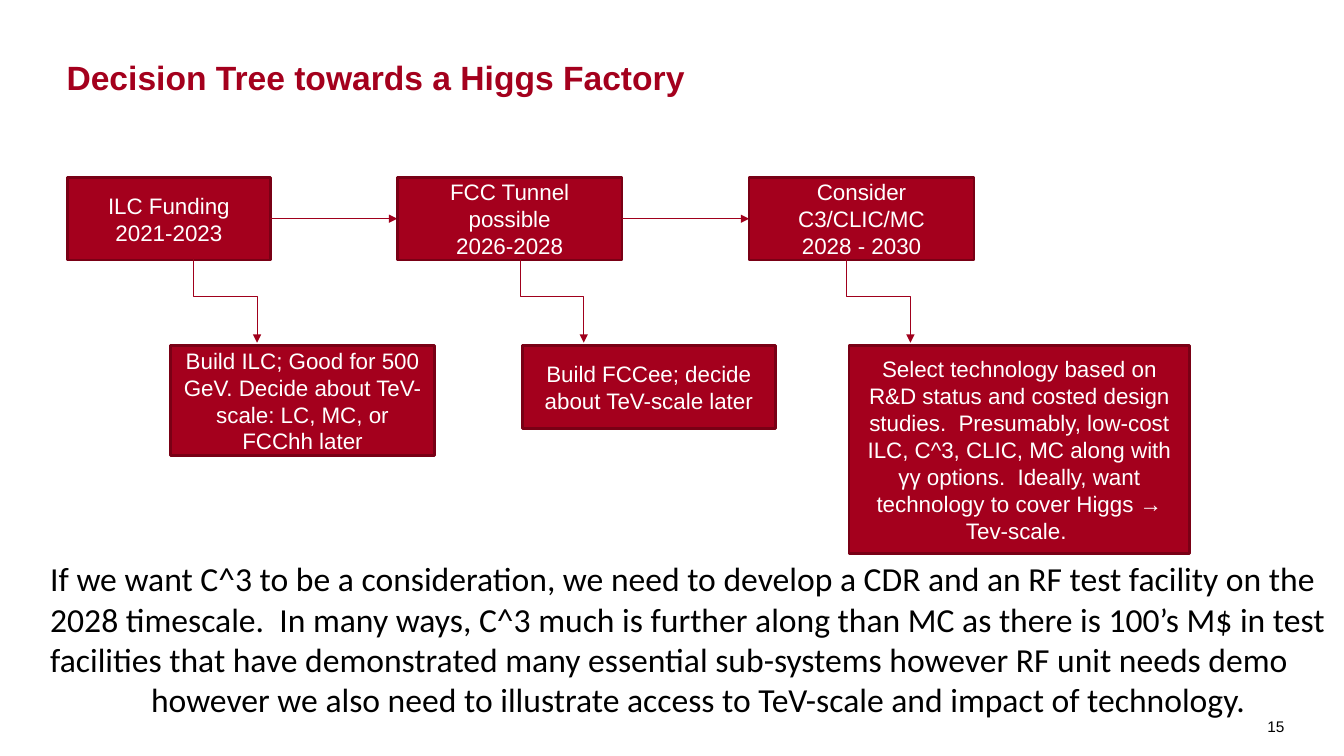
from lxml import etree
from pptx import Presentation
from pptx.dml.color import RGBColor
from pptx.enum.shapes import MSO_CONNECTOR as Connector, MSO_SHAPE as Shape
from pptx.enum.text import MSO_ANCHOR as Anchor, MSO_AUTO_SIZE as AutoSize, PP_ALIGN as Align
from pptx.oxml.ns import qn
from pptx.util import Inches, Pt

CRIMSON, DARK_CRIMSON, ARROW_RED = "A4001D", "790015", "A0001C"
BLACK, WHITE = "000000", "FFFFFF"

ROW_LEFT, ROW_TOP, STAGE_HEIGHT, STAGE_GAP = 0.67, 1.76, 0.82, 1.26
OUTCOME_TOP = 3.43
BRANCH_LEFT, BRANCH_PITCH, BRANCH_TOP = 1.92, 3.24, 2.55
BRANCH_RUN, BRANCH_DROP = 0.63, 0.85

# Stage text, stage width, outcome text, outcome left, width and height
DECISIONS = [
    ("ILC Funding\v2021-2023", 2.01,
     "Build ILC; Good for 500 GeV. Decide about TeV-scale: LC, MC, or FCChh later",
     (1.69, 2.62, 1.09)),
    ("FCC Tunnel\vpossible\v2026-2028", 2.23,
     "Build FCCee; decide about TeV-scale later",
     (5.18, 2.51, 0.82)),
    ("Consider C3/CLIC/MC\v2028 - 2030", 2.23,
     "Select technology based on R&D status and costed design studies.  Presumably, "
     "low-cost ILC, C^3, CLIC, MC along with γγ options.  Ideally, want technology "
     "to cover Higgs → Tev-scale. ",
     (8.42, 3.38, 2.06)),
]

CONCLUSION = (
    "If we want C^3 to be a consideration, we need to develop a CDR and an RF test facility on the\v"
    "2028 timescale.  In many ways, C^3 much is further along than MC as there is 100’s M$ in test \v"
    "facilities that have demonstrated many essential sub-systems however RF unit needs demo\v"
    "\t\thowever we also need to illustrate access to TeV-scale and impact of technology."
)


def color(hex_string):
    return RGBColor.from_string(hex_string)


def write(text_frame, text, size, font_name, font_color, bold=False, align=Align.LEFT):
    text_frame.text = text
    paragraph = text_frame.paragraphs[0]
    paragraph.alignment = align
    for run in paragraph.runs:
        run.font.size = Pt(size)
        run.font.name = font_name
        run.font.bold = bold
        run.font.color.rgb = color(font_color)


def add_text(slide, box, text, size, font_name, font_color, anchor=Anchor.TOP,
             margins=(0.1, 0.05, 0.1, 0.05), bold=False):
    text_frame = slide.shapes.add_textbox(*map(Inches, box)).text_frame
    text_frame.word_wrap = True
    text_frame.vertical_anchor = anchor
    (text_frame.margin_left, text_frame.margin_top,
     text_frame.margin_right, text_frame.margin_bottom) = map(Inches, margins)
    write(text_frame, text, size, font_name, font_color, bold)
    return text_frame


def add_process(slide, box, text):
    shape = slide.shapes.add_shape(Shape.FLOWCHART_PROCESS, *map(Inches, box))
    shape.shadow.inherit = False
    shape.fill.solid()
    shape.fill.fore_color.rgb = color(CRIMSON)
    shape.line.color.rgb = color(DARK_CRIMSON)
    shape.line.width = Pt(2)
    shape.text_frame.word_wrap = True
    shape.text_frame.vertical_anchor = Anchor.MIDDLE
    write(shape.text_frame, text, 16, "Arial", WHITE, align=Align.CENTER)


def add_arrow(slide, kind, start, end):
    connector = slide.shapes.add_connector(kind, *map(Inches, start + end))
    connector.line.color.rgb = color(ARROW_RED)
    connector.line.width = Pt(0.75)
    etree.SubElement(connector.line._get_or_add_ln(), qn("a:tailEnd"), type="triangle")
    etree.SubElement(connector._element.spPr, qn("a:effectLst"))
    return connector


def add_branch(slide, left, top):
    """Draw an arrow that goes down, right and down again, by turning an elbow."""
    middle_x, middle_y = left + BRANCH_RUN / 2, top + BRANCH_DROP / 2
    start = (middle_x - BRANCH_DROP / 2, middle_y - BRANCH_RUN / 2)
    end = (middle_x + BRANCH_DROP / 2, middle_y + BRANCH_RUN / 2)
    properties = add_arrow(slide, Connector.ELBOW, start, end)._element.spPr
    transform = properties.find(qn("a:xfrm"))
    transform.set("rot", str(270 * 60000))
    transform.set("flipH", "1")
    adjustments = properties.find(qn("a:prstGeom")).find(qn("a:avLst"))
    etree.SubElement(adjustments, qn("a:gd"), name="adj1", fmla="val 46000")


def add_decision_tree(slide, left, top):
    arrow_y = top + STAGE_HEIGHT / 2
    for index, (stage, width, outcome, outcome_box) in enumerate(DECISIONS):
        if index:
            add_arrow(slide, Connector.STRAIGHT, (left - STAGE_GAP, arrow_y), (left, arrow_y))
        add_process(slide, (left, top, width, STAGE_HEIGHT), stage)
        outcome_left, outcome_width, outcome_height = outcome_box
        add_process(slide, (outcome_left, OUTCOME_TOP, outcome_width, outcome_height), outcome)
        add_branch(slide, BRANCH_LEFT + index * BRANCH_PITCH, BRANCH_TOP)
        left += width + STAGE_GAP


def add_conclusion(slide, box):
    text_frame = add_text(slide, box, CONCLUSION, 24, "Calibri", BLACK)
    text_frame.word_wrap = False
    text_frame.auto_size = AutoSize.SHAPE_TO_FIT_TEXT


def main():
    presentation = Presentation()
    presentation.slide_width, presentation.slide_height = Inches(13.33), Inches(7.5)
    slide = presentation.slides.add_slide(presentation.slide_layouts[6])
    add_text(slide, (12.49, 6.91, 0.47, 0.59), "15", 11, "Arial", BLACK,
             Anchor.MIDDLE, (0.08, 0.06, 0.08, 0.05))
    add_text(slide, (0.66, 0.14, 11.82, 0.82), "Decision Tree towards a Higgs Factory",
             24, "Arial", CRIMSON, Anchor.BOTTOM, (0, 0, 0, 0), bold=True)
    add_decision_tree(slide, ROW_LEFT, ROW_TOP)
    add_conclusion(slide, (0.4, 5.49, 13.1, 1.72))
    presentation.save("out.pptx")


if __name__ == "__main__":
    main()
